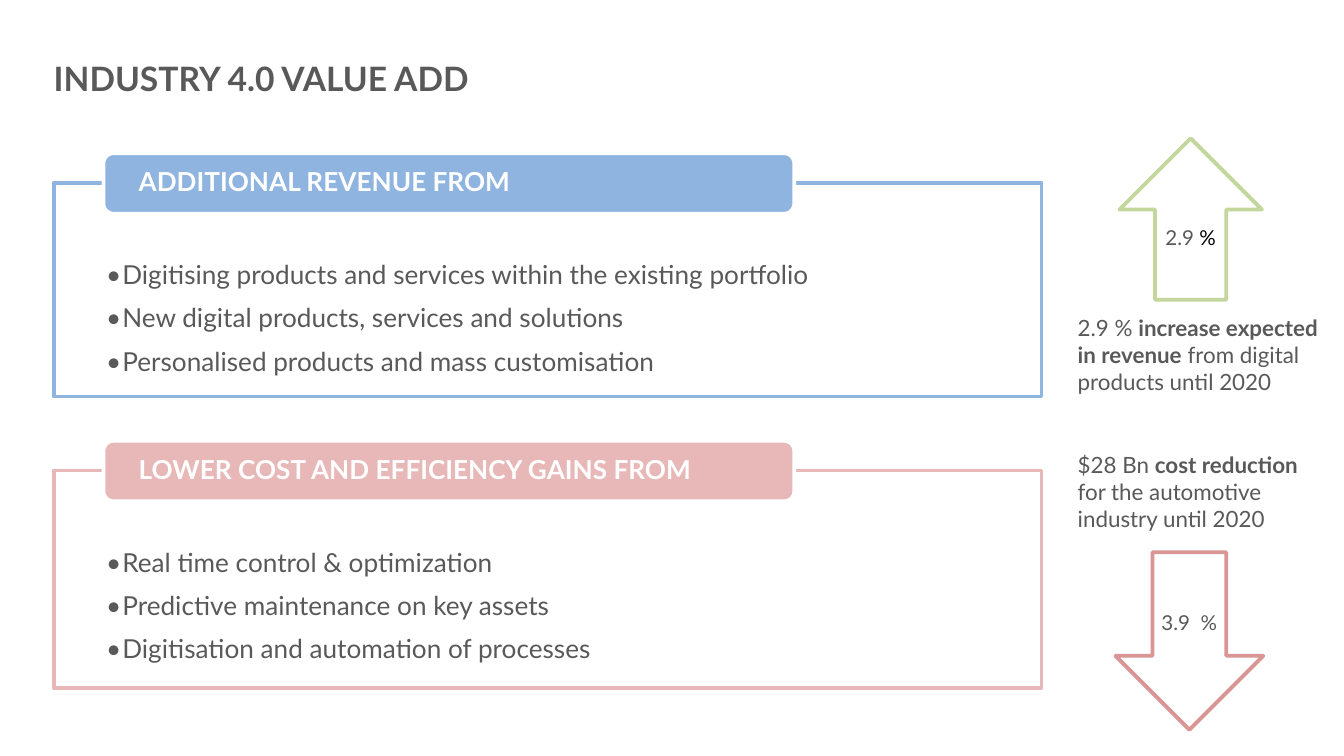
"""Build the Industry 4.0 value add slide."""
from dataclasses import dataclass
from typing import Any

import pptx
import pptx.dml.color
import pptx.enum.shapes
import pptx.enum.text
import pptx.oxml.ns
import pptx.util
from lxml import etree

Inches = pptx.util.Inches
Pt = pptx.util.Pt
Shapes = pptx.enum.shapes.MSO_SHAPE
Anchor = pptx.enum.text.MSO_ANCHOR
Align = pptx.enum.text.PP_ALIGN

FONT = "Lato"
GREY, WHITE, BLACK = "595959", "FFFFFF", "000000"
BLUE, PINK, RED, GREEN = "8FB4E0", "E7B8B7", "D99694", "C3D69B"

Box = tuple[float, float, float, float]


@dataclass
class Span:
    text: str
    bold: bool = False
    color: str = GREY


@dataclass
class Panel:
    top: float
    height: float
    color: str
    heading: str
    points: list[str]


@dataclass
class Arrow:
    box: Box
    kind: Any
    color: str
    label: list[Span]


@dataclass
class Caption:
    top: float
    spans: list[Span]


PANELS = [
    Panel(1.36, 1.59, BLUE, "ADDITIONAL REVENUE FROM", [
        "Digitising products and services within the existing portfolio",
        "New digital products, services and solutions",
        "Personalised products and mass customisation",
    ]),
    Panel(3.5, 1.62, PINK, "LOWER COST AND EFFICIENCY GAINS FROM", [
        "Real time control & optimization",
        "Predictive maintenance on key assets",
        "Digitisation and automation of processes",
    ]),
]
ARROWS = [
    Arrow((8.33, 1.03, 1.06, 1.2), Shapes.UP_ARROW, GREEN,
          [Span("2.9"), Span(" %", color=BLACK)]),
    Arrow((8.3, 4.11, 1.1, 1.32), Shapes.DOWN_ARROW, RED, [Span("3.9  %")]),
]
CAPTIONS = [
    Caption(2.29, [Span("2.9 % "), Span("increase expected in revenue", True),
                   Span(" from digital products until 2020")]),
    Caption(3.31, [Span("$28 Bn "), Span("cost reduction ", True),
                   Span("for the automotive industry until 2020")]),
]


def rgb(color: str) -> pptx.dml.color.RGBColor:
    return pptx.dml.color.RGBColor.from_string(color)


def add_outlined(slide: Any, kind: Any, box: Box, fill: str, line: str) -> Any:
    shape = slide.shapes.add_shape(kind, *map(Inches, box))
    shape.shadow.inherit = False
    shape.fill.solid()
    shape.fill.fore_color.rgb = rgb(fill)
    shape.line.color.rgb = rgb(line)
    shape.line.width = Pt(2)
    return shape


def set_frame(frame: Any, insets: Box, anchor: Any) -> None:
    frame.word_wrap = True
    frame.vertical_anchor = anchor
    (frame.margin_left, frame.margin_top,
     frame.margin_right, frame.margin_bottom) = map(Inches, insets)


def write(paragraph: Any, spans: list[Span], size: float,
          align: Any = Align.LEFT, spacing: float = 1.0) -> None:
    paragraph.alignment = align
    paragraph.line_spacing = spacing
    for span in spans:
        run = paragraph.add_run()
        run.text = span.text
        run.font.name = FONT
        run.font.size = Pt(size)
        run.font.bold = span.bold
        run.font.color.rgb = rgb(span.color)


def add_bullet(paragraph: Any) -> None:
    properties = paragraph._p.get_or_add_pPr()
    properties.set("marL", str(Inches(0.12)))
    properties.set("indent", str(Inches(-0.12)))
    face = etree.SubElement(properties, pptx.oxml.ns.qn("a:buFont"))
    face.set("typeface", FONT)
    bullet = etree.SubElement(properties, pptx.oxml.ns.qn("a:buChar"))
    bullet.set("char", "•")


def add_text(slide: Any, box: Box, insets: Box, anchor: Any,
             spans: list[Span], size: float, spacing: float = 1.0) -> None:
    frame = slide.shapes.add_textbox(*map(Inches, box)).text_frame
    set_frame(frame, insets, anchor)
    write(frame.paragraphs[0], spans, size, spacing=spacing)


def add_panel(slide: Any, panel: Panel) -> None:
    body = add_outlined(slide, Shapes.RECTANGLE,
                        (0.4, panel.top, 7.35, panel.height), WHITE, panel.color)
    frame = body.text_frame
    set_frame(frame, (0.39, 0.59, 0.58, 0.05), Anchor.TOP)
    for index, point in enumerate(panel.points):
        paragraph = frame.add_paragraph() if index else frame.paragraphs[0]
        add_bullet(paragraph)
        write(paragraph, [Span(point)], 14, spacing=0.9)
        paragraph.space_before = Pt(6 if index else 0)
        paragraph.space_after = Pt(2)

    heading = add_outlined(slide, Shapes.ROUNDED_RECTANGLE,
                           (0.77, panel.top - 0.22, 5.14, 0.45), panel.color, WHITE)
    set_frame(heading.text_frame, (0.24, 0.04, 0.24, 0.04), Anchor.MIDDLE)
    write(heading.text_frame.paragraphs[0],
          [Span(panel.heading, True, WHITE)], 14, spacing=0.9)


def add_arrow(slide: Any, arrow: Arrow) -> None:
    shape = add_outlined(slide, arrow.kind, arrow.box, WHITE, arrow.color)
    set_frame(shape.text_frame, (0.04, 0.05, 0.04, 0.05), Anchor.MIDDLE)
    write(shape.text_frame.paragraphs[0], arrow.label, 11, Align.CENTER)


def main() -> None:
    deck = pptx.Presentation()
    deck.slide_width = Inches(10)
    deck.slide_height = deck.slide_width * 9 // 16
    slide = deck.slides.add_slide(deck.slide_layouts[6])
    add_text(slide, (0.4, 0.4, 8.24, 0.4), (0, 0.05, 0.1, 0.05), Anchor.MIDDLE,
             [Span("INDUSTRY 4.0 VALUE ADD", True)], 18, 0.9)
    for panel in PANELS:
        add_panel(slide, panel)
    for arrow in ARROWS:
        add_arrow(slide, arrow)
    for caption in CAPTIONS:
        add_text(slide, (7.92, caption.top, 2.08, 0.71), (0.1, 0.05, 0.1, 0.05),
                 Anchor.TOP, caption.spans, 12)
    deck.save("out.pptx")


if __name__ == "__main__":
    main()
